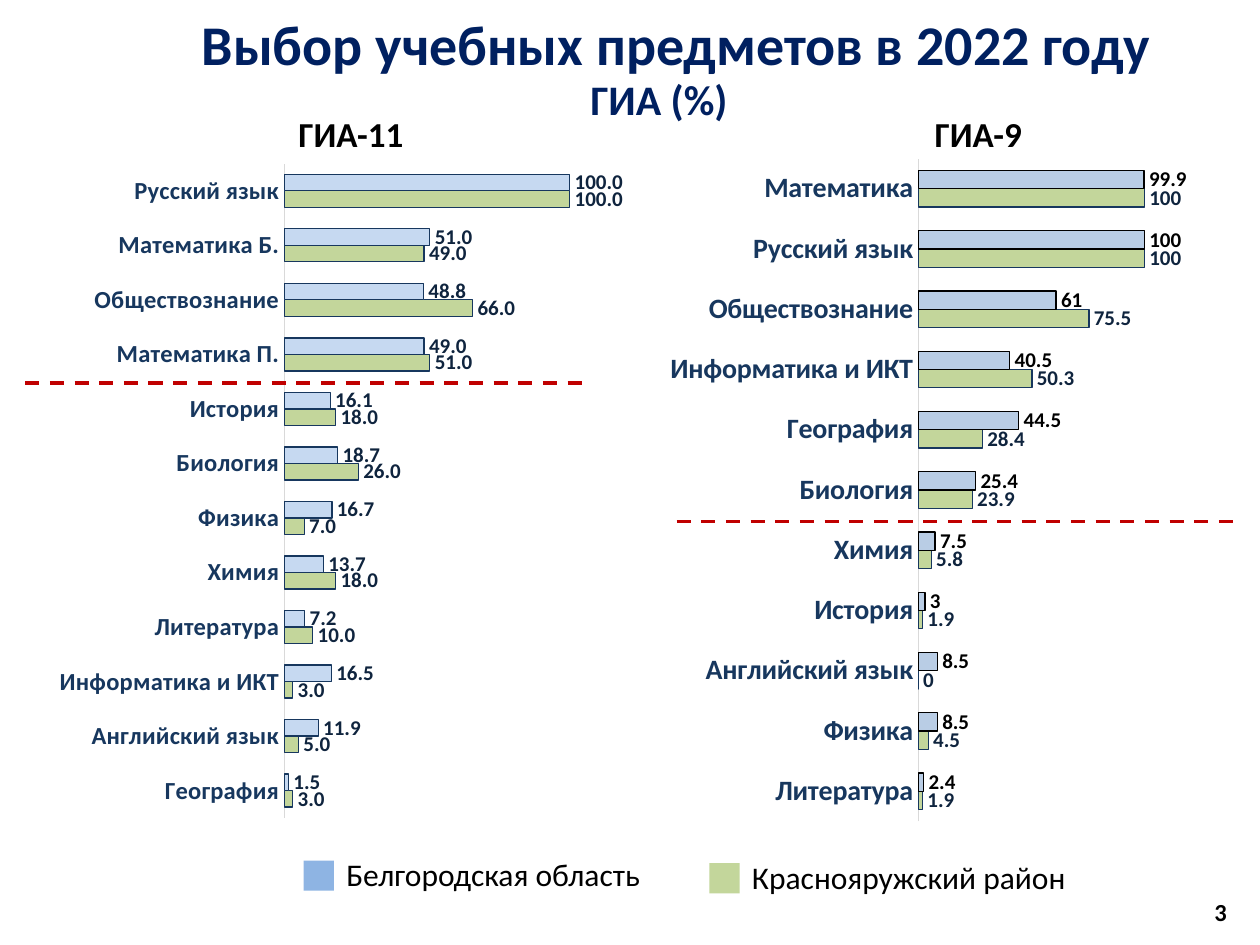
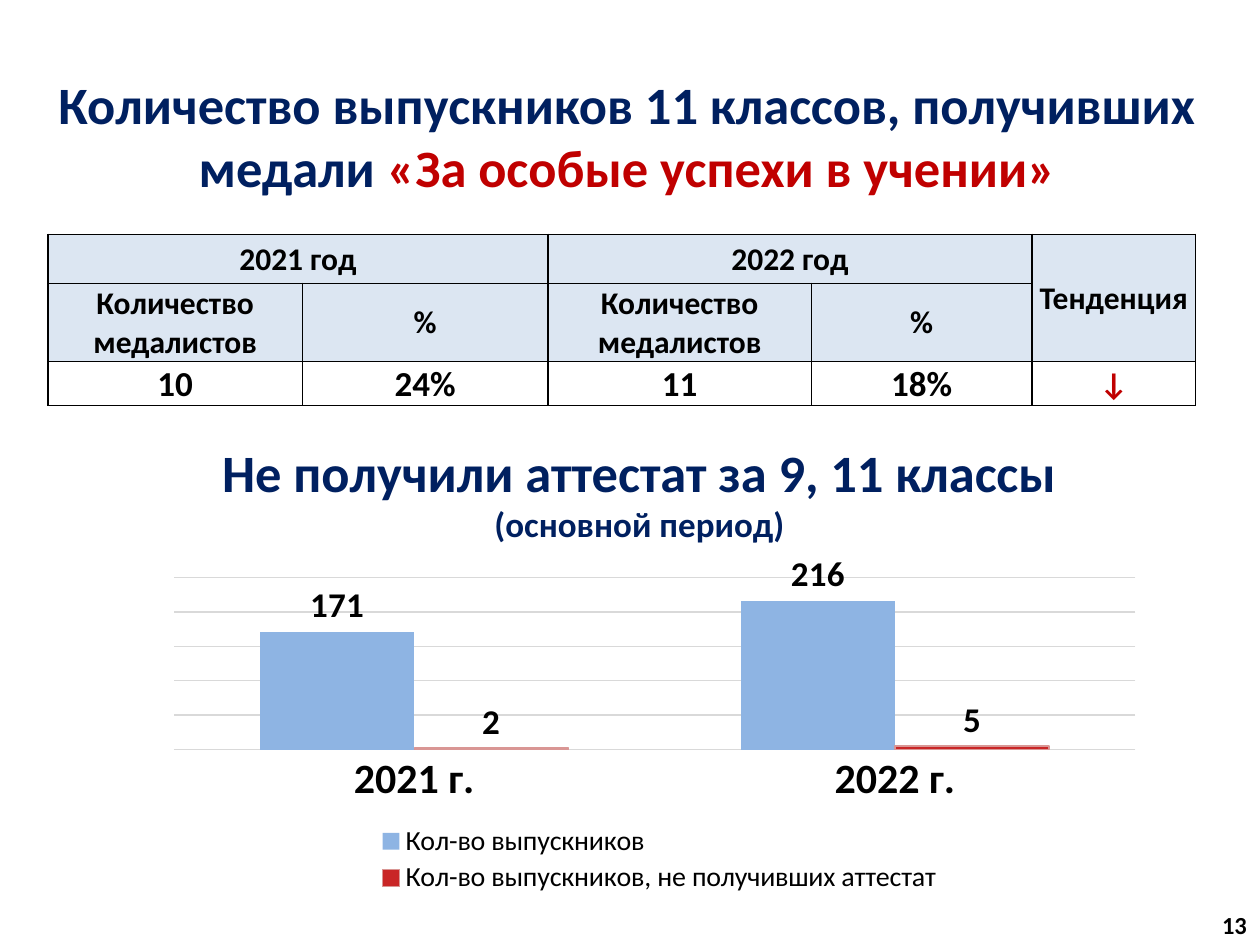
from lxml import etree
from pptx import Presentation
from pptx.chart.data import CategoryChartData
from pptx.dml.color import RGBColor
from pptx.enum.chart import XL_CHART_TYPE, XL_LABEL_POSITION, XL_LEGEND_POSITION, XL_TICK_MARK
from pptx.enum.dml import MSO_LINE
from pptx.enum.shapes import MSO_CONNECTOR, MSO_SHAPE
from pptx.enum.text import MSO_ANCHOR, PP_ALIGN
from pptx.oxml.ns import qn
from pptx.util import Inches, Pt

BARS, COLUMNS = XL_CHART_TYPE.BAR_CLUSTERED, XL_CHART_TYPE.COLUMN_CLUSTERED
OUTSIDE = XL_LABEL_POSITION.OUTSIDE_END
LEGEND_BELOW = XL_LEGEND_POSITION.BOTTOM
NO_TICKS = XL_TICK_MARK.NONE
DASH = MSO_LINE.DASH
STRAIGHT = MSO_CONNECTOR.STRAIGHT
RECTANGLE = MSO_SHAPE.RECTANGLE
LEFT, CENTER = PP_ALIGN.LEFT, PP_ALIGN.CENTER
TOP, MIDDLE, BOTTOM = MSO_ANCHOR.TOP, MSO_ANCHOR.MIDDLE, MSO_ANCHOR.BOTTOM

BLACK = RGBColor(0x00, 0x00, 0x00)
NAVY = RGBColor(0x00, 0x20, 0x60)
RED = RGBColor(0xC0, 0x00, 0x00)
PINK = RGBColor(0xD9, 0x96, 0x94)
BLUE = RGBColor(0x8E, 0xB4, 0xE3)
LIGHT_BLUE = RGBColor(0xC6, 0xD9, 0xF1)
STEEL_BLUE = RGBColor(0xB9, 0xCD, 0xE5)
PALE_BLUE = RGBColor(0xDC, 0xE6, 0xF2)
DEEP_BLUE = RGBColor(0x17, 0x37, 0x5E)
INK_BLUE = RGBColor(0x0F, 0x24, 0x3E)
GREEN = RGBColor(0xC3, 0xD6, 0x9B)
GRID_GREY = RGBColor(0xD9, 0xD9, 0xD9)

REGION, DISTRICT = "Белгородская область", "Краснояружский район"


def cells(count):
    """Length of grid cells; the slide is 100 columns by 75 rows."""
    return Inches(count / 10)


class Deck:
    font_name = "Calibri"

    def __init__(self):
        self.prs = Presentation()
        self.prs.slide_width, self.prs.slide_height = cells(100), cells(75)
        self.slide = None

    def new_slide(self):
        self.slide = self.prs.slides.add_slide(self.prs.slide_layouts[6])

    def style(self, font, size, color=BLACK, bold=True):
        font.name, font.size, font.bold = self.font_name, Pt(size), bold
        font.color.rgb = color

    def text(self, box, paragraphs, align=LEFT, anchor=TOP):
        """Each paragraph is a list of (text, size, color, bold) runs."""
        frame = self.slide.shapes.add_textbox(*map(cells, box)).text_frame
        frame.word_wrap, frame.vertical_anchor = True, anchor
        for number, runs in enumerate(paragraphs):
            paragraph = frame.add_paragraph() if number else frame.paragraphs[0]
            paragraph.alignment = align
            for words, *look in runs:
                run = paragraph.add_run()
                run.text = words
                self.style(run.font, *look)

    def page_number(self, col, row, number):
        self.text((col, row, 4.2, 4), [[(str(number), 14)]])

    def swatch(self, col, row, color):
        square = self.slide.shapes.add_shape(
            RECTANGLE, cells(col), cells(row), cells(2.4), cells(2.4))
        square.shadow.inherit = False
        square.fill.solid()
        square.fill.fore_color.rgb = color
        square.line.fill.background()

    def divider(self, col, row, width):
        line = self.slide.shapes.add_connector(
            STRAIGHT, cells(col), cells(row), cells(col + width), cells(row))
        line.line.color.rgb, line.line.width = RED, Pt(2)
        line.line.dash_style = DASH
        etree.SubElement(line._element.spPr, qn("a:effectLst"))

    def layout(self, parent, index, shares, inner=False):
        """Fix the place of a chart part as x, y, w, h shares of the chart."""
        for old in parent.findall(qn("c:layout")):
            parent.remove(old)
        layout = etree.Element(qn("c:layout"))
        manual = etree.SubElement(layout, qn("c:manualLayout"))
        settings = [("layoutTarget", "inner")] if inner else []
        settings += [("xMode", "edge"), ("yMode", "edge"), *zip("xywh", shares)]
        for tag, value in settings:
            etree.SubElement(manual, qn("c:" + tag)).set("val", str(value))
        parent.insert(index, layout)

    def chart(self, kind, box, plot_area, names, series, gap, top_value, axis_look, label_size):
        """Each series is (name, values, fill, outline, label color, label format)."""
        data = CategoryChartData()
        data.categories = names
        for name, values, *_ in series:
            data.add_series(name, values)
        chart = self.slide.shapes.add_chart(kind, *map(cells, box), data).chart
        chart.has_title = chart.has_legend = False
        self.style(chart.font, 10, bold=False)
        self.layout(chart._chartSpace.chart.plotArea, 0, plot_area, inner=True)

        names_axis, values_axis = chart.category_axis, chart.value_axis
        names_axis.major_tick_mark = NO_TICKS
        names_axis.format.line.color.rgb = GRID_GREY
        names_axis.format.line.width = Pt(0.75)
        self.style(names_axis.tick_labels.font, *axis_look)
        values_axis.visible = values_axis.has_major_gridlines = False
        values_axis.minimum_scale, values_axis.maximum_scale = 0, top_value

        plot = chart.plots[0]
        plot.gap_width, plot.overlap, plot.vary_by_categories = gap, 0, False
        for bars, (*_, fill, outline, label_color, label_format) in zip(plot.series, series):
            bars.invert_if_negative = False
            bars.format.fill.solid()
            bars.format.fill.fore_color.rgb = fill
            if outline:
                bars.format.line.color.rgb, bars.format.line.width = outline, Pt(0.75)
            labels = bars.data_labels
            labels.show_value, labels.position = True, OUTSIDE
            labels.number_format, labels.number_format_is_linked = label_format, False
            self.style(labels.font, label_size, label_color)
        return chart

    def gridlines(self, axis, step):
        axis.has_major_gridlines, axis.major_unit = True, step
        line = axis.major_gridlines.format.line
        line.color.rgb, line.width = GRID_GREY, Pt(0.75)

    def legend(self, chart, shares, size):
        chart.has_legend = True
        chart.legend.position = LEGEND_BELOW
        chart.legend.include_in_layout = False
        self.style(chart.legend.font, size, bold=False)
        self.layout(chart.legend._element, 1, shares)

    def cell(self, cell, words, size, color, fill, anchor):
        cell.text = words
        cell.vertical_anchor = anchor
        cell.margin_left = cell.margin_right = cell.margin_top = cells(0.1)
        cell.margin_bottom = 0
        paragraph = cell.text_frame.paragraphs[0]
        paragraph.alignment = CENTER
        for run in paragraph.runs:
            self.style(run.font, size, color)
        properties = cell._tc.get_or_add_tcPr()
        for side in ("a:lnL", "a:lnR", "a:lnT", "a:lnB"):
            border = etree.SubElement(properties, qn(side), w=str(Pt(1)))
            paint = etree.SubElement(border, qn("a:solidFill"))
            etree.SubElement(paint, qn("a:srgbClr"), val=str(BLACK))
        if fill:
            cell.fill.solid()
            cell.fill.fore_color.rgb = fill
        else:
            cell.fill.background()

    def table(self, col, row, widths, heights, rows, merges, look):
        """look(row, column) gives size, color, fill and anchor of a cell."""
        table = self.slide.shapes.add_table(
            len(heights), len(widths), cells(col), cells(row),
            cells(sum(widths)), cells(sum(heights))).table
        table.first_row = table.horz_banding = False
        for column, width in zip(table.columns, widths):
            column.width = cells(width)
        for line, height in zip(table.rows, heights):
            line.height = cells(height)
        for r, line in enumerate(rows):
            for c, words in enumerate(line):
                self.cell(table.cell(r, c), words, *look(r, c))
        for first, last in merges:
            table.cell(*first).merge(table.cell(*last))


# Exam choices: subject, district, region; listed from the bottom bar up
GRADE_11 = [
    ("География", 3, 1.5), ("Английский язык", 5, 11.9), ("Информатика и ИКТ", 3, 16.5),
    ("Литература", 10, 7.2), ("Химия", 18, 13.7), ("Физика", 7, 16.7),
    ("Биология", 26, 18.7), ("История", 18, 16.1), ("Математика П.", 51, 49),
    ("Обществознание", 66, 48.8), ("Математика Б.", 49, 51), ("Русский язык", 100, 100),
]
GRADE_9 = [
    ("Литература", 1.9, 2.4), ("Физика", 4.5, 8.5), ("Английский язык", 0, 8.5),
    ("История", 1.9, 3), ("Химия", 5.8, 7.5), ("Биология", 23.9, 25.4),
    ("География", 28.4, 44.5), ("Информатика и ИКТ", 50.3, 40.5),
    ("Обществознание", 75.5, 61), ("Русский язык", 100, 100), ("Математика", 100, 99.9),
]


def subject_choice(deck):
    deck.new_slide()

    # Headings
    deck.text((12.3, 0.3, 82.8, 6.4),
              [[("Выбор учебных предметов в 2022 году", 32, NAVY)]], CENTER)
    deck.text((30.2, 4, 44.2, 6.3), [[("ГИА (%)", 24, NAVY)]], CENTER, BOTTOM)

    # One chart per exam, with its heading and cut-off line
    exams = [
        ("ГИА-11", 22.7, GRADE_11, (3.8, 11.9, 46.9, 54.1), (0.4, 0.02, 0.58, 0.96),
         14, LIGHT_BLUE, DEEP_BLUE, INK_BLUE, "0.0", (2, 30.4)),
        ("ГИА-9", 73.2, GRADE_9, (52.4, 11.5, 43.1, 54.8), (0.475, 0.02, 0.5, 0.96),
         16, STEEL_BLUE, BLACK, BLACK, "General", (53.7, 41.4)),
    ]
    for (heading, heading_col, results, box, plot_area, axis_size,
         region_fill, region_outline, region_label, label_format, cut_off) in exams:
        subjects, district, region = zip(*results)
        deck.chart(BARS, box, plot_area, subjects, [
            (DISTRICT, district, GREEN, DEEP_BLUE, INK_BLUE, label_format),
            (REGION, region, region_fill, region_outline, region_label, label_format),
        ], 130, 120, (axis_size, DEEP_BLUE), 12)
        deck.text((heading_col, 8.4, 11.2, 4.4), [[(heading, 20)]])
        deck.divider(*cut_off, 44.9)

    # Shared key
    for col, row, color, area in [(24.1, 68.3, BLUE, REGION), (56.3, 68.5, GREEN, DISTRICT)]:
        deck.swatch(col, row, color)
        deck.text((col + 2.4, row - 0.9, 40, 4), [[(area, 18, BLACK, False)]])
    deck.page_number(95.4, 70.7, 3)


def medals_and_certificates(deck):
    deck.new_slide()

    # Medal winners
    deck.text((0.7, 5.2, 98.2, 11.1),
              [[("Количество выпускников 11 классов, получивших медали ", 30, NAVY),
                ("«За особые успехи в учении»", 30, RED)]], CENTER)

    def look(row, column):
        if row < 2:
            return 18, BLACK, PALE_BLUE, MIDDLE
        if column == 4:
            return 18, RED, None, MIDDLE
        return 20, BLACK, None, MIDDLE if column == 3 else BOTTOM

    winners = "Количество медалистов"
    deck.table(3.8, 18.6, [20.2, 19.5, 20.9, 17.5, 13], [3.9, 6.2, 3.5], [
        ["2021 год", "", "2022 год", "", "Тенденция"],
        [winners, "%", winners, "%", ""],
        ["10", "24%", "11", "18%", "↓"],
    ], [((0, 0), (0, 1)), ((0, 2), (0, 3)), ((0, 4), (1, 4))], look)

    # Graduates without a certificate
    deck.text((4.3, 34.4, 92.9, 9.4),
              [[("Не получили аттестат за 9, 11 классы", 30, NAVY)],
               [("(основной период)", 20, NAVY)]], CENTER)
    graduates = deck.chart(
        COLUMNS, (12.2, 43.9, 79.5, 27.6), (0.02, 0.06, 0.96, 0.5), ["2021 г.", "2022 г."], [
            ("Кол-во выпускников", [171, 216], BLUE, None, BLACK, "General"),
            ("Кол-во выпускников, не получивших аттестат", [2, 5], RED, PINK, BLACK, "General"),
        ], 112, 250, (24, BLACK), 20)
    deck.gridlines(graduates.value_axis, 50)
    deck.legend(graduates, (0.22, 0.77, 0.57, 0.22), 16)
    without = graduates.plots[0].series[1].format.fill
    tint = without._xPr.find(qn("a:solidFill"))[0]
    etree.SubElement(tint, qn("a:alpha"), val="85000")
    deck.page_number(96, 71.7, 13)


def main():
    deck = Deck()
    subject_choice(deck)
    medals_and_certificates(deck)
    deck.prs.save("out.pptx")


if __name__ == "__main__":
    main()
